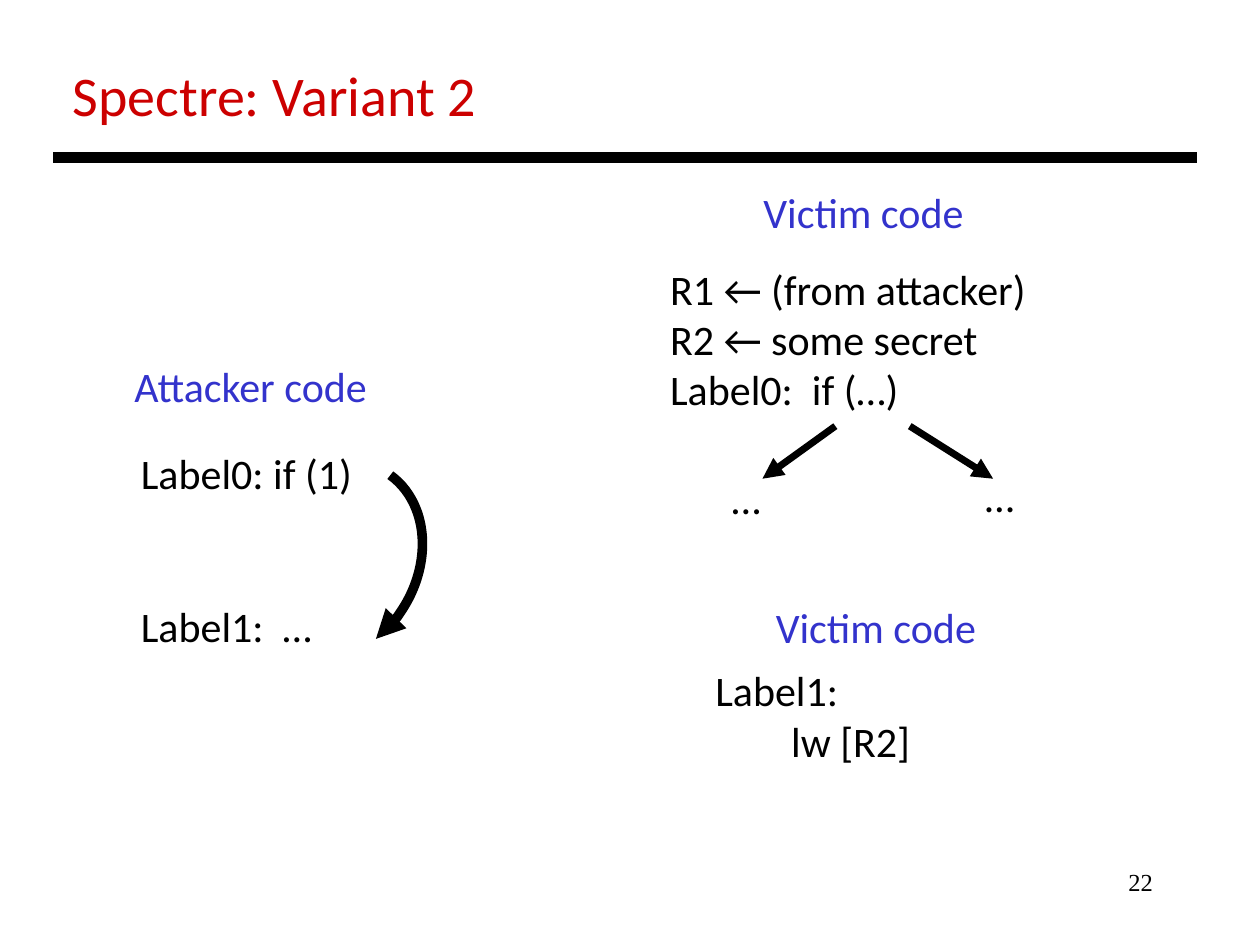
from dataclasses import dataclass

from lxml import etree
from pptx import Presentation
from pptx.dml.color import RGBColor
from pptx.enum.shapes import MSO_CONNECTOR, MSO_SHAPE
from pptx.enum.text import MSO_AUTO_SIZE, PP_ALIGN
from pptx.oxml.ns import qn
from pptx.util import Cm, Pt

BLACK = RGBColor(0x00, 0x00, 0x00)
RED = RGBColor(0xCC, 0x00, 0x00)
BLUE = RGBColor(0x33, 0x33, 0xCC)

STRAIGHT = MSO_CONNECTOR.STRAIGHT
ARC = MSO_SHAPE.ARC
LEFT, RIGHT = PP_ALIGN.LEFT, PP_ALIGN.RIGHT
FIT_SHAPE = MSO_AUTO_SIZE.SHAPE_TO_FIT_TEXT

ARC_UNITS_PER_DEGREE = 0.6


@dataclass(frozen=True)
class Row:
    text: str
    space_before: float = 0  # points
    indent: float = 0  # centimetres


@dataclass(frozen=True)
class Label:
    """A text box, placed in centimetres."""
    left: float
    top: float
    width: float
    height: float
    rows: tuple[Row, ...]
    color: RGBColor = BLACK
    size: float = 24
    font: str = "Calibri"
    align: PP_ALIGN = LEFT
    wrap: bool = False


@dataclass(frozen=True)
class Stroke:
    """A straight line, placed in centimetres."""
    start: tuple[float, float]
    end: tuple[float, float]
    weight: float
    arrow: bool = False


def heading(left: float, top: float, width: float, text: str) -> Label:
    return Label(left, top, width, 1.27, (Row(text),), BLUE)


def ellipsis(left: float, top: float) -> Label:
    return Label(left, top, 1.3, 1.27, (Row("…"),))


LABELS = (
    Label(1.22, 1.09, 8.74, 1.63, (Row("Spectre: Variant 2"),), RED, 32),
    heading(15.14, 3.63, 4.78, "Victim code"),
    Label(13.26, 5.18, 7.82, 3.33, (
        Row("R1 ← (from attacker)"),
        Row("R2 ← some secret"),
        Row("Label0:  if (…)"),
    )),
    ellipsis(14.5, 9.4),
    ellipsis(19.61, 9.37),
    heading(15.39, 12.01, 4.78, "Victim code"),
    Label(14.17, 13.28, 4.47, 2.31, (Row("Label1:"), Row("lw [R2]", indent=1.53))),
    heading(2.46, 7.14, 5.46, "Attacker code"),
    Label(2.59, 8.89, 4.8, 4.37, (
        Row("Label0: if (1)"),
        Row("Label1:  …", space_before=58.6),
    )),
    Label(18.21, 17.35, 5.28, 1.27, (Row("22"),), size=14,
          font="Times New Roman", align=RIGHT, wrap=True),
)

STROKES = (
    Stroke((1.07, 3.18), (24.13, 3.18), 6),
    Stroke((16.84, 8.59), (15.37, 9.65), 4, arrow=True),
    Stroke((18.34, 8.59), (20.02, 9.65), 4, arrow=True),
)


def add_label(page, label: Label) -> None:
    box = page.shapes.add_textbox(
        Cm(label.left), Cm(label.top), Cm(label.width), Cm(label.height))
    frame = box.text_frame
    frame.word_wrap = label.wrap
    if not label.wrap:
        frame.auto_size = FIT_SHAPE
    for index, row in enumerate(label.rows):
        para = frame.add_paragraph() if index else frame.paragraphs[0]
        para.text = row.text
        para.alignment = label.align
        para.font.name = label.font
        para.font.size = Pt(label.size)
        para.font.color.rgb = label.color
        if row.space_before:
            para.space_before = Pt(row.space_before)
        if row.indent:
            para._p.get_or_add_pPr().set("marL", str(Cm(row.indent)))


def style_line(shape, weight: float, arrow: bool) -> None:
    shape.line.color.rgb = BLACK
    shape.line.width = Pt(weight)
    if arrow:
        outline = shape.line._get_or_add_ln()
        etree.SubElement(outline, qn("a:tailEnd"), type="triangle")


def add_stroke(page, stroke: Stroke) -> None:
    points = (Cm(value) for value in stroke.start + stroke.end)
    connector = page.shapes.add_connector(STRAIGHT, *points)
    style_line(connector, stroke.weight, stroke.arrow)
    etree.SubElement(connector._element.spPr, qn("a:effectLst"))


def add_jump_arrow(page) -> None:
    """Draw the curved arrow from Label0 to Label1 in the attacker code."""
    arc = page.shapes.add_shape(ARC, Cm(4.88), Cm(9.19), Cm(3.51), Cm(4.29))
    arc.rotation = 33.3
    for index, degrees in enumerate((271.8, 25.3)):
        arc.adjustments[index] = degrees * ARC_UNITS_PER_DEGREE
    arc.fill.background()
    style_line(arc, 5.5, arrow=True)
    arc.shadow.inherit = False


def main() -> None:
    deck = Presentation()
    deck.slide_width, deck.slide_height = Cm(25.4), Cm(19.05)
    page = deck.slides.add_slide(deck.slide_layouts[6])
    for stroke in STROKES:
        add_stroke(page, stroke)
    for label in LABELS:
        add_label(page, label)
    add_jump_arrow(page)
    deck.save("out.pptx")


if __name__ == "__main__":
    main()
